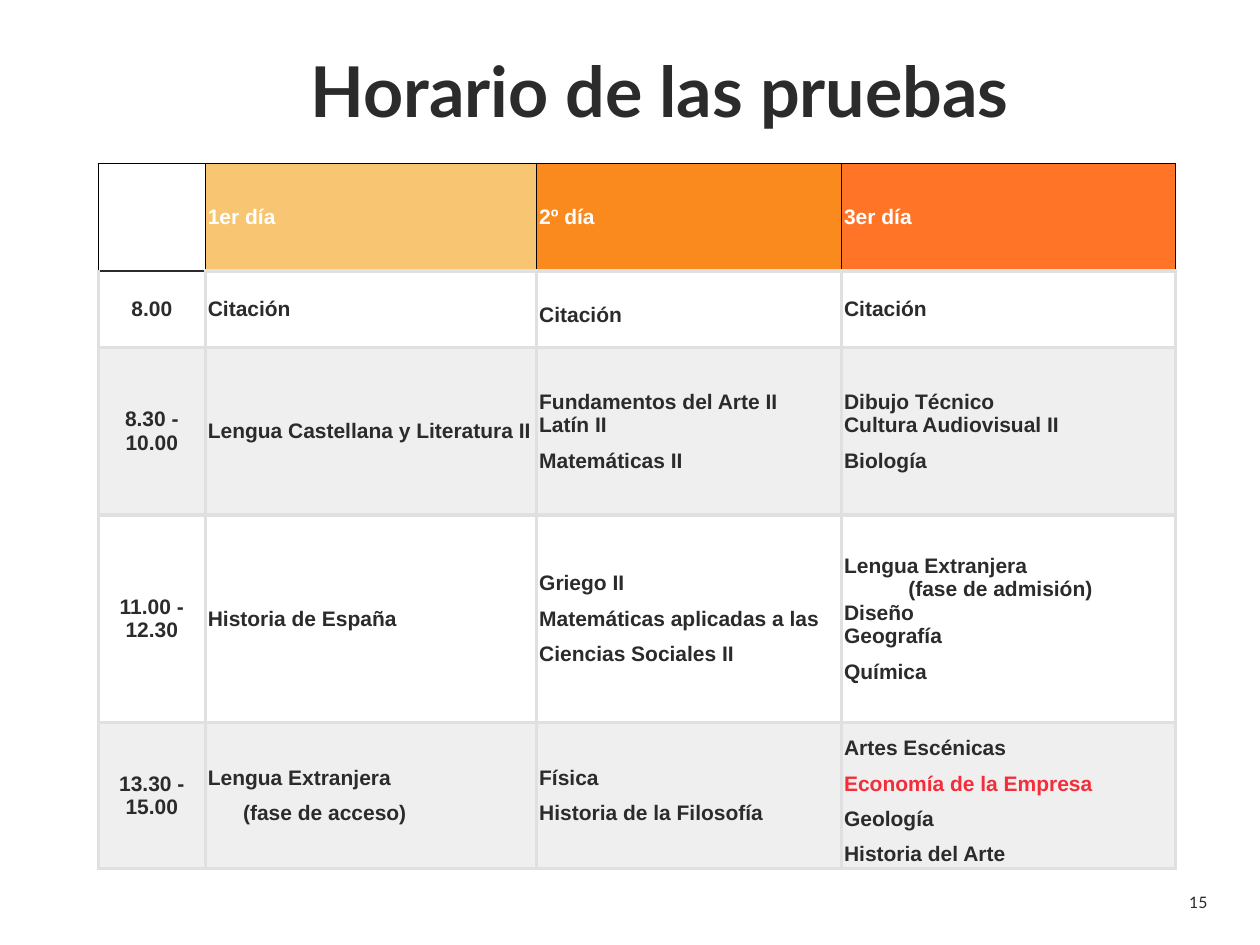
from dataclasses import dataclass
from lxml.etree import SubElement
from pptx import Presentation
from pptx.dml.color import RGBColor
from pptx.enum.text import MSO_ANCHOR, MSO_AUTO_SIZE, PP_ALIGN
from pptx.oxml.ns import qn
from pptx.util import Inches, Pt


@dataclass
class Theme:
    ink: str = "2B2B2B"
    white: str = "FFFFFF"
    red: str = "F42D3A"
    black: str = "000000"
    grid: str = "E0E0E0"
    shade: str = "202020"
    days: tuple = ("F8C572", "FA891E", "FF7427")
    heading_font: str = "Lato"
    body_font: str = "Arial"
    title_size: int = 40
    body_size: int = 12
    number_size: int = 9
    thin: float = 1
    thick: float = 2.25


@dataclass
class Line:
    text: str
    spacing: float = 1
    indent: float = 0
    color: str = Theme.ink


theme = Theme()
deck = Presentation()
deck.slide_width, deck.slide_height = Inches(10), Inches(7.5)
across, down = deck.slide_width / 100, deck.slide_height / 100
page = deck.slides.add_slide(deck.slide_layouts[6])


def write(para, text, font, size, color, bold=True):
    span = para.add_run()
    span.text = text
    span.font.name, span.font.size, span.font.bold = font, Pt(size), bold
    span.font.color.rgb = RGBColor.from_string(color)


def draw_border(properties, position, side, color, width):
    border = properties.makeelement(qn(f"a:ln{side}"), {"w": str(Pt(width))})
    fill = SubElement(border, qn("a:solidFill"))
    SubElement(fill, qn("a:srgbClr"), val=color)
    properties.insert(position, border)


schedule = [
    [[], [Line("1er día", color=theme.white)], [Line("2º día", color=theme.white)],
     [Line("3er día", color=theme.white)]],
    [[Line("8.00")], [Line("Citación")], [Line("Citación", 1.5)], [Line("Citación")]],
    [[Line("8.30 - 10.00")], [Line("Lengua Castellana y Literatura II")],
     [Line("Fundamentos del Arte II"), Line("Latín II"), Line("Matemáticas II", 1.5)],
     [Line("Dibujo Técnico"), Line("Cultura Audiovisual II"), Line("Biología", 1.5)]],
    [[Line("11.00 - 12.30")], [Line("Historia de España")],
     [Line("Griego II"), Line("Matemáticas aplicadas a las Ciencias Sociales II", 1.5)],
     [Line("Lengua Extranjera"), Line("(fase de admisión)", indent=5.1), Line("Diseño"),
      Line("Geografía"), Line("Química", 1.5)]],
    [[Line("13.30 - 15.00")],
     [Line("Lengua Extranjera"), Line("(fase de acceso)", 1.5, 2.8)],
     [Line("Física"), Line("Historia de la Filosofía", 1.5)],
     [Line("Artes Escénicas", 1.5), Line("Economía de la Empresa", 1.5, color=theme.red),
      Line("Geología", 1.5), Line("Historia del Arte", 1.5)]],
]
column_shares = [8.5, 26.3, 24.2, 26.5]
row_shares = [11.33, 8.13, 17.73, 21.95, 15.47]

frame = page.shapes.add_table(
    len(row_shares), len(column_shares), int(7.8 * across), int(17.33 * down),
    int(sum(column_shares) * across), int(sum(row_shares) * down))
table = frame.table
table.first_row = table.horz_banding = False
for column, share in zip(table.columns, column_shares):
    column.width = int(share * across)
for row, share in zip(table.rows, row_shares):
    row.height = int(share * down)

for row_index, entries in enumerate(schedule):
    for column_index, lines in enumerate(entries):
        cell = table.cell(row_index, column_index)
        cell.vertical_anchor = MSO_ANCHOR.MIDDLE
        cell.margin_left = cell.margin_right = int(0.2 * across)
        cell.margin_top = cell.margin_bottom = int(0.27 * down)
        header, corner = row_index == 0, column_index == 0

        if header and corner:
            cell.fill.background()
        else:
            cell.fill.solid()
            if header:
                color, opacity = theme.days[column_index - 1], 100
            elif row_index % 2:
                color, opacity = theme.white, 90
            else:
                color, opacity = theme.shade, 7
            cell.fill.fore_color.rgb = RGBColor.from_string(color)
            if opacity < 100:
                tint = cell._tc.tcPr.find(f".//{qn('a:srgbClr')}")
                SubElement(tint, qn("a:alpha"), val=str(opacity * 1000))

        light, dark = (theme.grid, theme.thick), (theme.ink, theme.thin)
        edge = (theme.black, theme.thin) if header else light
        borders = {"L": edge, "R": edge, "T": edge, "B": light}
        if corner and row_index < 2:
            borders["B" if header else "T"] = dark
        for position, (side, style) in enumerate(borders.items()):
            draw_border(cell._tc.tcPr, position, side, *style)

        for line_index, line in enumerate(lines):
            box = cell.text_frame
            para = box.add_paragraph() if line_index else box.paragraphs[0]
            para.alignment = PP_ALIGN.CENTER if corner else PP_ALIGN.LEFT
            para.line_spacing = line.spacing
            if line.indent:
                para._p.get_or_add_pPr().set("marL", str(int(line.indent * across)))
            write(para, line.text, theme.body_font, theme.body_size, line.color)

labels = [
    ("Horario de las pruebas", (9.6, 5.47, 85.5, 9.2), theme.title_size, True, 0.9, MSO_ANCHOR.TOP),
    ("15", (94, 93.87, 2.2, 3.2), theme.number_size, False, 1, MSO_ANCHOR.MIDDLE),
]
for text, (left, top, width, height), size, is_title, spacing, anchor in labels:
    box = page.shapes.add_textbox(
        int(left * across), int(top * down), int(width * across), int(height * down)).text_frame
    box.word_wrap = is_title
    box.auto_size = MSO_AUTO_SIZE.SHAPE_TO_FIT_TEXT
    box.vertical_anchor = anchor
    box.margin_left = box.margin_right = int(0.2 * across)
    box.margin_top = box.margin_bottom = int(0.53 * down)
    para = box.paragraphs[0]
    para.alignment = PP_ALIGN.CENTER
    para.line_spacing = spacing
    write(para, text, theme.heading_font, size, theme.ink, is_title)

deck.save("out.pptx")
